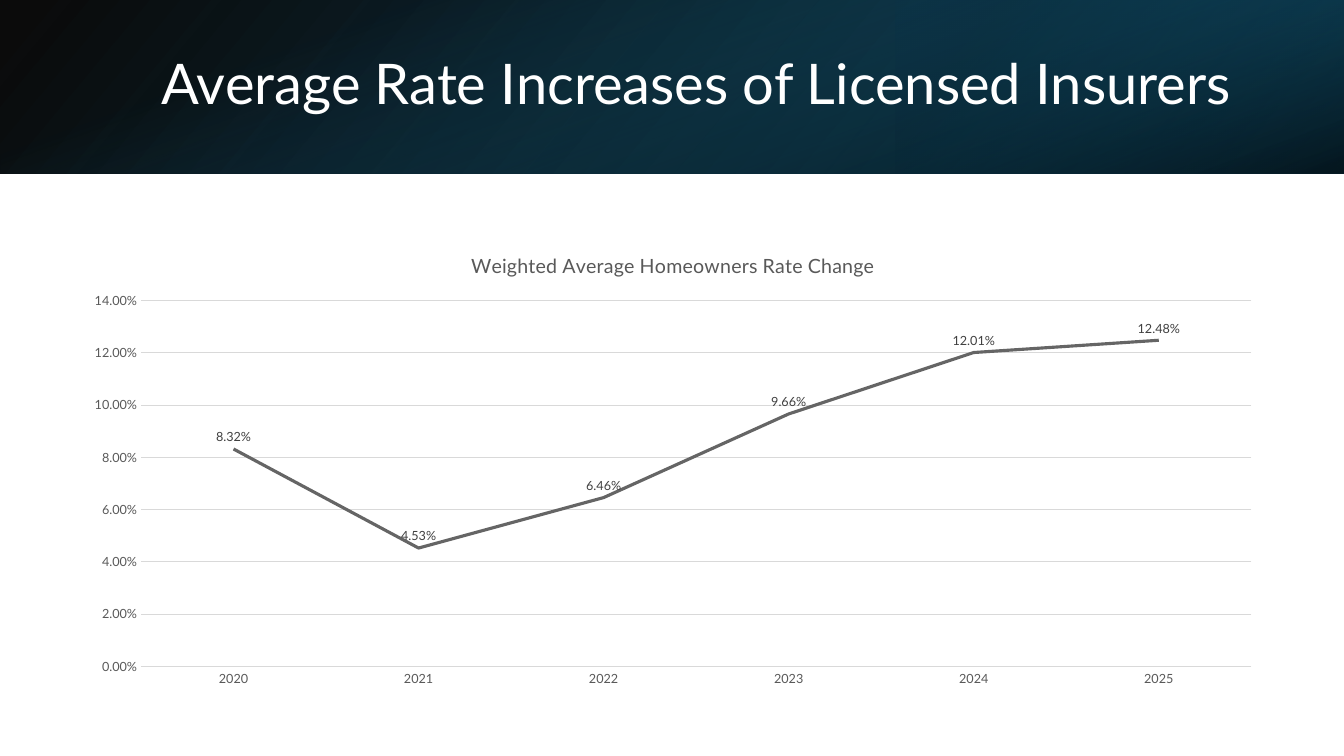
from dataclasses import dataclass

import pptx
import pptx.chart.data
import pptx.dml.color
import pptx.enum.chart
import pptx.enum.shapes
import pptx.enum.text
import pptx.oxml.ns
import pptx.util
from lxml import etree


@dataclass(frozen=True)
class Theme:
    font: str = "Lato"
    white: str = "FFFFFF"
    black: str = "000000"
    navy: str = "0B3041"
    deep_blue: str = "104862"
    blue: str = "156082"
    series: str = "656565"
    label: str = "404040"
    axis: str = "595959"
    grid: str = "D9D9D9"
    title_pt: float = 40
    chart_title_pt: float = 14
    chart_pt: float = 10
    small_pt: float = 9
    series_line: float = 2.25
    hairline: float = 0.75


@dataclass(frozen=True)
class Stop:
    position: float
    color: str
    opacity: int  # percent


@dataclass(frozen=True)
class Panel:
    box: tuple[float, float, float, float]  # inches, before rotation
    angle: int  # clockwise degrees
    stops: tuple[Stop, Stop]
    rotation: int = 0
    flipped: bool = False


T = Theme()
WIDTH, HEIGHT = 13.33, 7.5
HEADER = 1.72
MID = (WIDTH - HEADER) / 2

PANELS = (
    Panel((0, 0, WIDTH, HEADER), 140,
          (Stop(0, T.black, 96), Stop(1, T.deep_blue, 100)), flipped=True),
    Panel((WIDTH * 2 / 3, 0, WIDTH / 3, HEADER), 320,
          (Stop(0.19, T.navy, 68), Stop(1, T.blue, 79)), rotation=180, flipped=True),
    Panel((MID, -MID, HEADER, WIDTH), 340,
          (Stop(0.23, T.blue, 0), Stop(0.99, T.black, 74)), rotation=90),
)

CHART_TITLE = "Weighted Average Homeowners Rate Change"
RATES = {"2020": 0.0832, "2021": 0.0453, "2022": 0.0646,
         "2023": 0.0966, "2024": 0.1201, "2025": 0.1248}


def rgb(color: str) -> pptx.dml.color.RGBColor:
    return pptx.dml.color.RGBColor.from_string(color)


def inches(*lengths: float) -> list[int]:
    return [pptx.util.Inches(length) for length in lengths]


def style_font(font, size: float, color: str) -> None:
    font.name = T.font
    font.size = pptx.util.Pt(size)
    font.bold = False
    font.color.rgb = rgb(color)


def style_line(line, color: str, width: float) -> None:
    line.color.rgb = rgb(color)
    line.width = pptx.util.Pt(width)


def add_panel(s, panel: Panel) -> None:
    sp = s.shapes.add_shape(pptx.enum.shapes.MSO_SHAPE.RECTANGLE, *inches(*panel.box))
    sp.shadow.inherit = False
    sp.line.fill.background()
    sp.rotation = panel.rotation
    if panel.flipped:
        sp.element.spPr.get_or_add_xfrm().set("flipH", "1")
    sp.fill.gradient()
    sp.fill.gradient_angle = 360 - panel.angle
    for gs, stop in zip(sp.fill.gradient_stops, panel.stops):
        gs.position = stop.position
        gs.color.rgb = rgb(stop.color)
    colors = sp.element.spPr.xpath("a:gradFill//a:srgbClr")
    for clr, stop in zip(colors, panel.stops):
        alpha = etree.SubElement(clr, pptx.oxml.ns.qn("a:alpha"))
        alpha.set("val", str(stop.opacity * 1000))


def fill_title(s, text: str) -> None:
    title = s.shapes.title
    title.left, title.top, title.width, title.height = inches(1.5, 0.38, 10.98, 0.96)
    title.element.getparent().append(title.element)  # in front of the panels
    tf = title.text_frame
    tf.text = text
    tf.word_wrap = True
    tf.auto_size = pptx.enum.text.MSO_AUTO_SIZE.NONE
    tf.vertical_anchor = pptx.enum.text.MSO_ANCHOR.MIDDLE
    p = tf.paragraphs[0]
    p.alignment = pptx.enum.text.PP_ALIGN.LEFT
    p.line_spacing = 0.9
    style_font(p.runs[0].font, T.title_pt, T.white)


def add_rate_chart(s) -> None:
    data = pptx.chart.data.CategoryChartData(number_format="0.00%")
    data.categories = list(RATES)
    data.add_series(CHART_TITLE, list(RATES.values()))
    chart = s.shapes.add_chart(pptx.enum.chart.XL_CHART_TYPE.LINE,
                               *inches(0.7, 2.31, 11.95, 4.59), data).chart
    style_font(chart.font, T.chart_pt, T.black)
    chart.has_legend = False
    chart.has_title = True
    tf = chart.chart_title.text_frame
    tf.text = CHART_TITLE
    style_font(tf.paragraphs[0].runs[0].font, T.chart_title_pt, T.axis)
    chart.chart_title.include_in_layout = False

    for axis in (chart.category_axis, chart.value_axis):
        axis.major_tick_mark = pptx.enum.chart.XL_TICK_MARK.NONE
        axis.minor_tick_mark = pptx.enum.chart.XL_TICK_MARK.NONE
        style_font(axis.tick_labels.font, T.small_pt, T.axis)
    style_line(chart.category_axis.format.line, T.grid, T.hairline)
    value_axis = chart.value_axis
    value_axis.format.line.fill.background()
    value_axis.has_major_gridlines = True
    style_line(value_axis.major_gridlines.format.line, T.grid, T.hairline)
    value_axis.tick_labels.number_format = "0.00%"
    value_axis.tick_labels.number_format_is_linked = False

    plot = chart.plots[0]
    plot.vary_by_categories = False
    rate = plot.series[0]
    rate.smooth = False
    rate.marker.style = pptx.enum.chart.XL_MARKER_STYLE.NONE
    style_line(rate.format.line, T.series, T.series_line)
    labels = rate.data_labels
    labels.show_value = True
    labels.position = pptx.enum.chart.XL_LABEL_POSITION.ABOVE
    labels.number_format = "0.00%"
    labels.number_format_is_linked = False
    style_font(labels.font, T.small_pt, T.label)


def main() -> None:
    prs = pptx.Presentation()
    prs.slide_width, prs.slide_height = inches(WIDTH, HEIGHT)
    s = prs.slides.add_slide(prs.slide_layouts.get_by_name("Title Only"))
    s.background.fill.solid()
    s.background.fill.fore_color.rgb = rgb(T.white)
    for panel in PANELS:
        add_panel(s, panel)
    fill_title(s, "Average Rate Increases of Licensed Insurers")
    add_rate_chart(s)
    prs.save("out.pptx")


if __name__ == "__main__":
    main()
